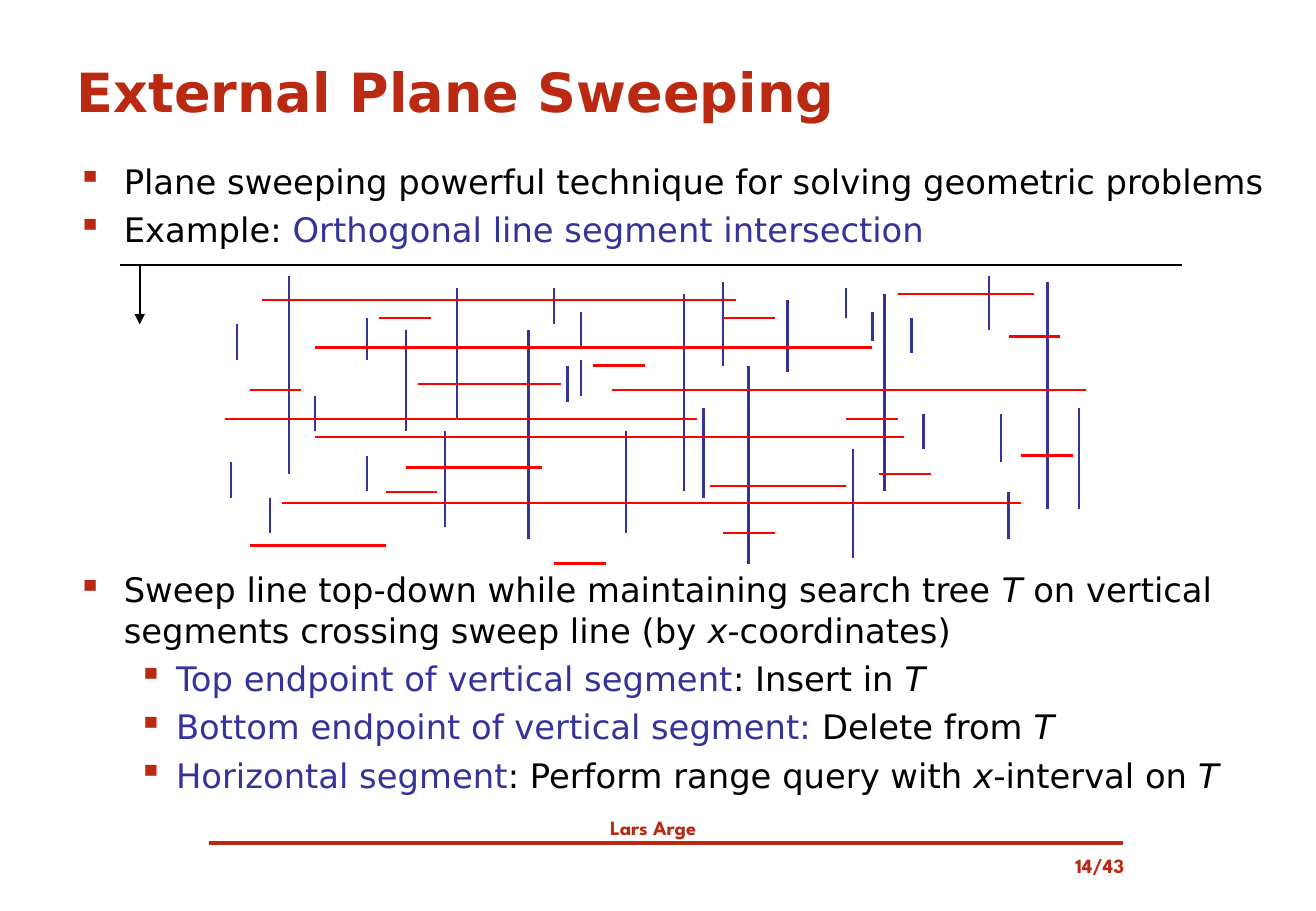
from lxml.etree import SubElement
from pptx import Presentation
from pptx.dml.color import RGBColor
from pptx.enum.shapes import MSO_CONNECTOR
from pptx.enum.text import MSO_ANCHOR, PP_ALIGN
from pptx.oxml.ns import qn
from pptx.util import Pt

PX = 9144  # EMU per px, 100 px to the inch
BRICK = RGBColor(0xBA, 0x2A, 0x12)
BLUE = RGBColor(0x33, 0x33, 0x99)
RED = RGBColor(0xFF, 0x00, 0x00)
BLACK = RGBColor(0x00, 0x00, 0x00)
BODY_FONT, FOOTER_FONT = "DejaVu Sans", "League Spartan"

TITLE = "External Plane Sweeping"
PLAIN, TERM, ITALIC = "plain", "term", "italic"

# (level, space before in pt, runs); the third bullet leaves room for the diagram
BULLETS = [
    (0, 0, [("Plane sweeping powerful technique for solving geometric problems", PLAIN)]),
    (0, 4.66, [("Example: ", PLAIN), ("Orthogonal line segment intersection", TERM)]),
    (0, 189.5, [("Sweep line top-down while maintaining search tree ", PLAIN), ("T", ITALIC),
                (" on vertical segments crossing sweep line (by ", PLAIN), ("x", ITALIC),
                ("-coordinates)", PLAIN)]),
    (1, 4.66, [("Top endpoint of vertical segment", TERM), (": Insert in ", PLAIN),
               ("T", ITALIC)]),
    (1, 4.66, [("Bottom endpoint of vertical segment:", TERM), (" Delete from ", PLAIN),
               ("T", ITALIC)]),
    (1, 4.66, [("Horizontal segment", TERM), (": Perform range query with ", PLAIN),
               ("x", ITALIC), ("-interval on ", PLAIN), ("T", ITALIC)]),
]
INDENTS = [(38, -38), (81, -31)]  # left margin and first line, by level

# (text, box, alignment)
FOOTERS = [
    ("Lars Arge", (53, 666, 969, 30), PP_ALIGN.CENTER),
    ("14/43", (837, 698, 98, 30), PP_ALIGN.RIGHT),
]

# (y, left, right)
HORIZONTALS = [
    (242, 739, 851), (247, 216, 606), (262, 312, 355), (262, 595, 638),
    (277, 830, 872), (286, 259, 718), (301, 488, 531), (316, 344, 462),
    (321, 206, 248), (321, 504, 894), (345, 185, 574), (345, 696, 739),
    (360, 259, 744), (375, 840, 883), (385, 334, 446), (390, 723, 766),
    (400, 584, 696), (405, 318, 360), (414, 232, 840), (439, 595, 638),
    (449, 206, 318), (464, 456, 499),
]
# (x, top, bottom)
VERTICALS = [
    (190, 380, 410), (195, 267, 296), (222, 410, 439), (238, 227, 390),
    (259, 326, 355), (302, 262, 296), (302, 375, 404), (334, 272, 355),
    (366, 355, 434), (376, 237, 345), (435, 272, 444), (456, 237, 267),
    (467, 301, 331), (478, 257, 286), (478, 296, 326), (515, 355, 439),
    (563, 242, 404), (579, 336, 410), (595, 232, 301), (616, 301, 464),
    (648, 247, 306), (696, 237, 262), (702, 370, 459), (718, 257, 281),
    (728, 242, 404), (750, 262, 291), (760, 341, 370), (814, 227, 272),
    (824, 341, 380), (830, 405, 444), (862, 232, 419), (888, 336, 419),
]

prs = Presentation()
prs.slide_width, prs.slide_height = 1083 * PX, 750 * PX
slide = prs.slides.add_slide(prs.slide_layouts[5])


def style(font, name, size, color, bold=False):
    font.name, font.size, font.bold = name, Pt(size), bold
    font.color.rgb = color


def add_line(x1, y1, x2, y2, color, width=1.38, arrow=False):
    line = slide.shapes.add_connector(
        MSO_CONNECTOR.STRAIGHT, x1 * PX, y1 * PX, x2 * PX, y2 * PX)
    line.line.color.rgb = color
    line.line.width = Pt(width)
    if arrow:
        SubElement(line.line._get_or_add_ln(), qn("a:tailEnd"), type="triangle")
    SubElement(line._element.spPr, qn("a:effectLst"))


def add_box(box):
    frame = slide.shapes.add_textbox(*(n * PX for n in box)).text_frame
    frame.word_wrap = True
    return frame


def set_bullet(paragraph, level):
    margin, first = INDENTS[level]
    props = paragraph._p.get_or_add_pPr()
    props.set("marL", str(margin * PX))
    props.set("indent", str(first * PX))
    color = SubElement(props, qn("a:buClr"))
    SubElement(color, qn("a:srgbClr"), val=str(BRICK))
    SubElement(props, qn("a:buChar"), char="▪")


# Footer and its rule
for text, box, align in FOOTERS:
    footer = add_box(box).paragraphs[0]
    footer.text, footer.alignment = text, align
    style(footer.font, FOOTER_FONT, 12, BRICK, bold=True)
add_line(172, 694, 924, 694, BRICK, 2.25)

# Title
title = slide.shapes.title
title.left, title.top, title.width, title.height = (n * PX for n in (53, 36, 975, 77))
title.text_frame.text = TITLE
title.text_frame.vertical_anchor = MSO_ANCHOR.MIDDLE
heading = title.text_frame.paragraphs[0]
heading.alignment = PP_ALIGN.LEFT
style(heading.font, BODY_FONT, 32, BRICK, bold=True)

# Bullets
body = add_box((54, 127, 1011, 599))
for i, (level, space, runs) in enumerate(BULLETS):
    bullet = body.add_paragraph() if i else body.paragraphs[0]
    bullet.level = level
    set_bullet(bullet, level)
    if space:
        bullet.space_before = Pt(space)
    style(bullet.font, BODY_FONT, 20, BLACK)
    for text, kind in runs:
        run = bullet.add_run()
        run.text = text
        if kind == TERM:
            run.font.color.rgb = BLUE
        elif kind == ITALIC:
            run.font.italic = True

# Sweep line with its direction
add_line(99, 218, 973, 218, BLACK, 1.5)
add_line(115, 218, 115, 267, BLACK, arrow=True)

# Segments
for x, top, bottom in VERTICALS:
    add_line(x, top, x, bottom, BLUE)
for y, left, right in HORIZONTALS:
    add_line(left, y, right, y, RED)

prs.save("out.pptx")
